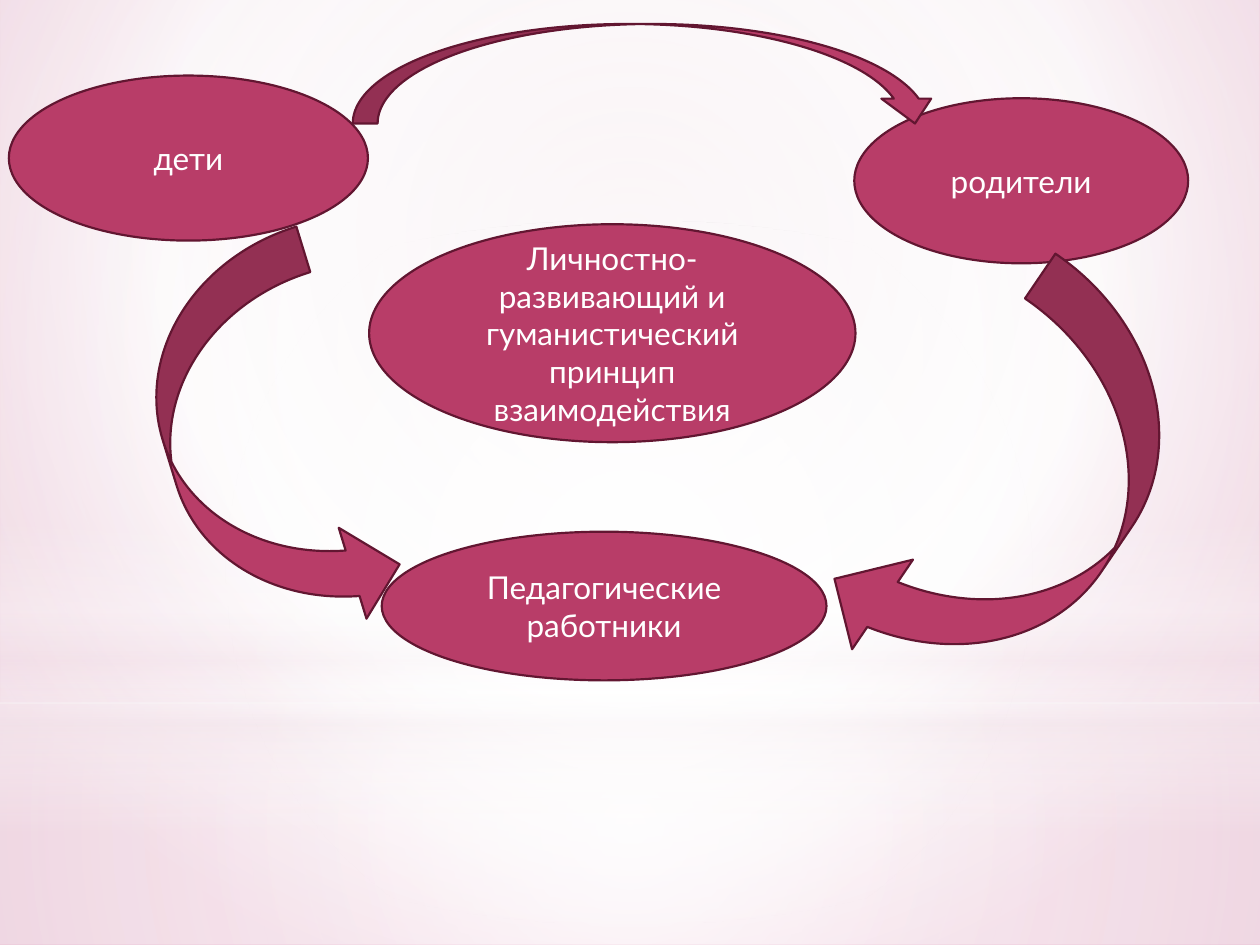
import pptx
import pptx.util
import pptx.dml.color
import pptx.enum.shapes
import pptx.enum.text
import pptx.oxml.ns
import lxml.etree

RGBColor = pptx.dml.color.RGBColor
SHAPE = pptx.enum.shapes.MSO_SHAPE
BERRY = RGBColor(0xB8, 0x3D, 0x68)
WINE = RGBColor(0x62, 0x16, 0x31)
WHITE = RGBColor(0xFF, 0xFF, 0xFF)
BLUSH = RGBColor(0xF4, 0xE7, 0xED)
ROSE = RGBColor(0xED, 0xDA, 0xE2)
PINK = RGBColor(0xE0, 0x9D, 0xBC)


def paint_gradient(fill, owner, stops, focus=None):
    fill.gradient()
    gradient = owner.find(".//" + pptx.oxml.ns.qn("a:gradFill"))
    for child in list(gradient):
        gradient.remove(child)

    def add(parent, tag, **attributes):
        return lxml.etree.SubElement(parent, pptx.oxml.ns.qn(tag), attributes)

    stop_list = add(gradient, "a:gsLst")
    for position, color, opacity in stops:
        stop = add(stop_list, "a:gs", pos=str(position * 1000))
        tint = add(stop, "a:srgbClr", val=str(color))
        if opacity < 100:
            add(tint, "a:alpha", val=str(opacity * 1000))
    if focus:
        circle = add(gradient, "a:path", path="circle")
        add(circle, "a:fillToRect", **{side: str(share * 1000) for side, share in zip("ltrb", focus)})
    else:
        add(gradient, "a:lin", ang="5400000", scaled="0")


def write(shape, text, font="Lato", size=18, color=WHITE):
    frame = shape.text_frame
    frame.word_wrap = True
    frame.vertical_anchor = pptx.enum.text.MSO_ANCHOR.MIDDLE
    paragraph = frame.paragraphs[0]
    paragraph.alignment = pptx.enum.text.PP_ALIGN.CENTER
    run = paragraph.add_run()
    run.text = text
    run.font.name = font
    run.font.size = pptx.util.Pt(size)
    run.font.color.rgb = color


deck = pptx.Presentation()
deck.slide_width = pptx.util.Inches(10)
deck.slide_height = pptx.util.Inches(7.5)
column = deck.slide_width / 100
row = deck.slide_height / 75
slide = deck.slides.add_slide(deck.slide_layouts[6])

backdrop = slide.background.fill
paint_gradient(backdrop, slide.element,
               [(0, ROSE, 100), (60, WHITE, 100), (100, PINK, 100)], (20, 10, 20, 60))

center = (50, 50, 50, 50)
glows = [
    (SHAPE.RECTANGLE, 55.8, 19.2, [(0, WHITE, 91), (37, WHITE, 76), (100, BLUSH, 79)], center),
    (SHAPE.RECTANGLE, 0, 55.8, [(0, WHITE, 89), (48, WHITE, 62), (100, BLUSH, 79)], center),
    (SHAPE.RECTANGLE, 41.2, 25, [(0, WHITE, 0), (29, WHITE, 30), (45, BLUSH, 40),
                                 (55, WHITE, 26), (65, BLUSH, 60), (100, WHITE, 0)], None),
    (SHAPE.OVAL, 17.5, 55.8, [(0, WHITE, 100), (56, WHITE, 0)], center),
]
for kind, top, height, stops, focus in glows:
    glow = slide.shapes.add_shape(kind, 0, int(top * row), deck.slide_width, int(height * row))
    glow.shadow.inherit = False
    glow.line.fill.background()
    paint_gradient(glow.fill, glow.element, stops, focus)

scheme = [
    (SHAPE.OVAL, 29.3, 17.8, 38.6, 17.3, 0,
     "Личностно-развивающий и гуманистический принцип взаимодействия"),
    (SHAPE.OVAL, 0.7, 6, 28.5, 13.1, 0, "дети"),
    (SHAPE.OVAL, 67.8, 7.8, 26.5, 13.1, 0, "родители"),
    (SHAPE.OVAL, 30.3, 42.2, 35.3, 11.8, 0, "Педагогические работники"),
    (SHAPE.CURVED_RIGHT_ARROW, 13.4, 19.5, 15.1, 31.8, 343, None),
    (SHAPE.CURVED_LEFT_ARROW, 72.3, 21.9, 17.2, 35.5, 34.2, None),
    (SHAPE.CURVED_DOWN_ARROW, 28, 1.9, 46.6, 7.9, 0, None),
]
for kind, left, top, width, height, turn, label in scheme:
    part = slide.shapes.add_shape(kind, int(left * column), int(top * row),
                                  int(width * column), int(height * row))
    part.rotation = turn
    part.shadow.inherit = False
    part.fill.solid()
    part.fill.fore_color.rgb = BERRY
    part.line.color.rgb = WINE
    part.line.width = pptx.util.Pt(1.25)
    if label:
        write(part, label)

deck.save("out.pptx")
